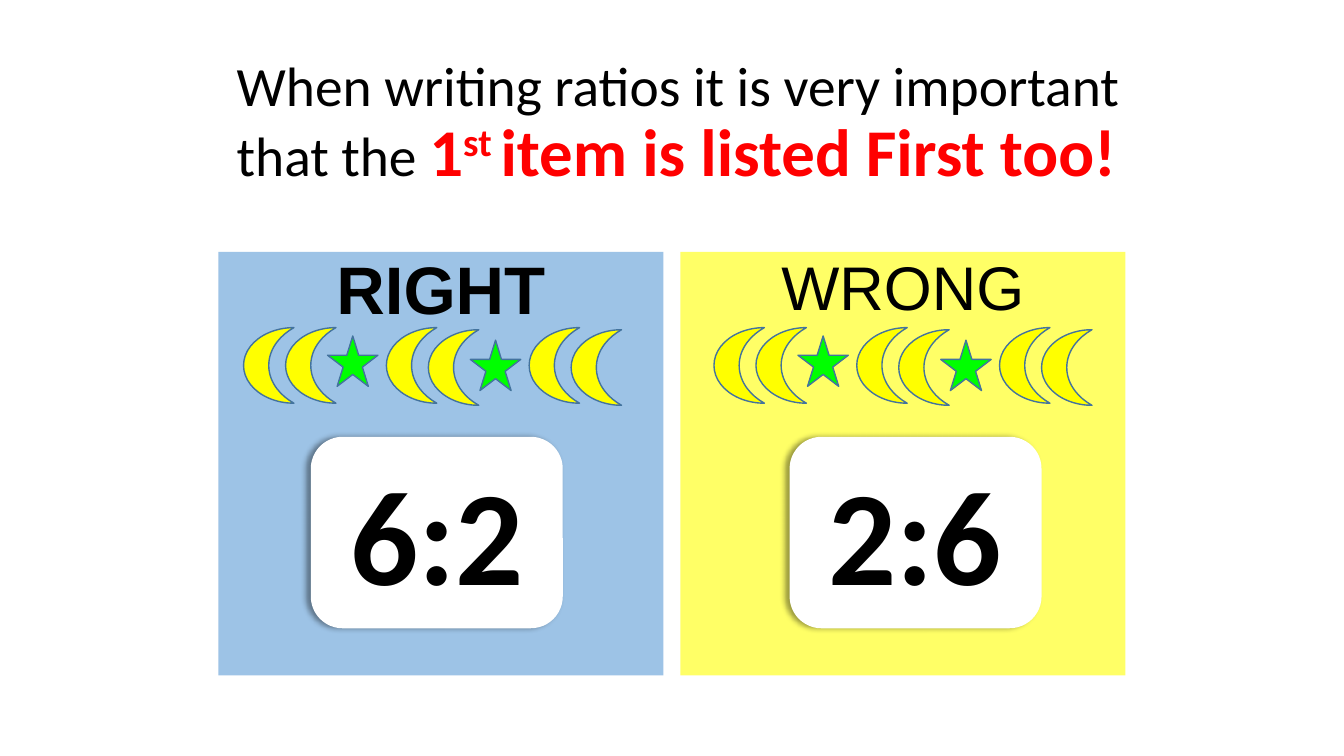
import pptx
import pptx.util
import pptx.dml.color
import pptx.enum.shapes
import pptx.enum.text
import lxml.etree

Pt = pptx.util.Pt
SHAPE = pptx.enum.shapes.MSO_SHAPE
ANCHOR = pptx.enum.text.MSO_ANCHOR
A = "http://schemas.openxmlformats.org/drawingml/2006/main"
SHADOW = f"""<a:effectLst xmlns:a="{A}">
  <a:outerShdw blurRad="50800" dist="38100" dir="10800000" algn="r" rotWithShape="0">
    <a:srgbClr val="000000"><a:alpha val="40000"/></a:srgbClr>
  </a:outerShdw>
</a:effectLst>"""


def add_run(p, text, size, font="Calibri", color="000000", bold=False):
    r = p.add_run()
    r.text = text
    r.font.size = Pt(size)
    r.font.name = font
    r.font.bold = bold
    r.font.color.rgb = pptx.dml.color.RGBColor.from_string(color)
    return r


def add_filled(kind, x, y, w, h, fill, line=None):
    sp = s.shapes.add_shape(kind, Pt(x), Pt(y), Pt(w), Pt(h))
    sp.shadow.inherit = False
    sp.fill.solid()
    sp.fill.fore_color.rgb = pptx.dml.color.RGBColor.from_string(fill)
    if line:
        sp.line.color.rgb = pptx.dml.color.RGBColor.from_string(line)
        sp.line.width = Pt(1)
    else:
        sp.line.fill.background()
    sp.text_frame.word_wrap = True
    sp.text_frame.vertical_anchor = ANCHOR.TOP
    sp.text_frame.paragraphs[0].alignment = pptx.enum.text.PP_ALIGN.CENTER
    return sp


prs = pptx.Presentation()
prs.slide_width, prs.slide_height = Pt(960), Pt(540)
s = prs.slides.add_slide(prs.slide_layouts[6])

# Title
tf = s.shapes.add_textbox(Pt(162), Pt(16), Pt(648), Pt(146)).text_frame
tf.word_wrap = True
tf.vertical_anchor = ANCHOR.MIDDLE
p = tf.paragraphs[0]
p.line_spacing = 0.9
add_run(p, "When writing ratios it is very important that the ", 39.6)
add_run(p, "1", 47.7, color="FF0000", bold=True)
r = add_run(p, "st ", 47.7, color="FF0000", bold=True)
r.font._element.set("baseline", "30000")
add_run(p, "item is listed First too!", 47.7, color="FF0000", bold=True)

# Panels: left, fill, heading, size, bold, left of symbols, left of card, ratio
panels = [
    (156, "9DC3E6", "RIGHT", 48, True, 174, 222, "6:2"),
    (486, "FFFF66", "WRONG", 44, False, 510, 564, "2:6"),
]
# Symbols in drawing order: group of three, place in group, top
moons = [(0, 0, 234), (0, 1, 234), (1, 1, 235.5), (1, 0, 234), (2, 1, 235.5), (2, 0, 234)]
stars = [(0, 2, 240), (1, 2, 243)]
symbols = [
    (SHAPE.MOON, moons, 54, "FFFF00"),
    (SHAPE.STAR_5_POINT, stars, 36, "00FF00"),
]

for left, fill, heading, size, bold, symbols_left, card_left, ratio in panels:
    # Panel with heading
    panel = add_filled(SHAPE.RECTANGLE, left, 180, 318, 302.4, fill)
    p = panel.text_frame.paragraphs[0]
    p.line_spacing = 0.9
    p.space_before = Pt(10)
    add_run(p, heading, size, "Arial", bold=bold)

    # Row of moons and stars
    for kind, places, height, color in symbols:
        for group, place, top in places:
            x = symbols_left + group * 102 + place * 30
            add_filled(kind, x, top, 36, height, color, "43739E")

    # Ratio card
    card = add_filled(SHAPE.ROUNDED_RECTANGLE, card_left, 312, 180, 136.8, "FFFFFF")
    spPr = card._element.spPr
    spPr.replace(spPr.find(f"{{{A}}}effectLst"), lxml.etree.fromstring(SHADOW))
    card.text_frame.auto_size = pptx.enum.text.MSO_AUTO_SIZE.SHAPE_TO_FIT_TEXT
    add_run(card.text_frame.paragraphs[0], ratio, 96, bold=True)

prs.save("out.pptx")
